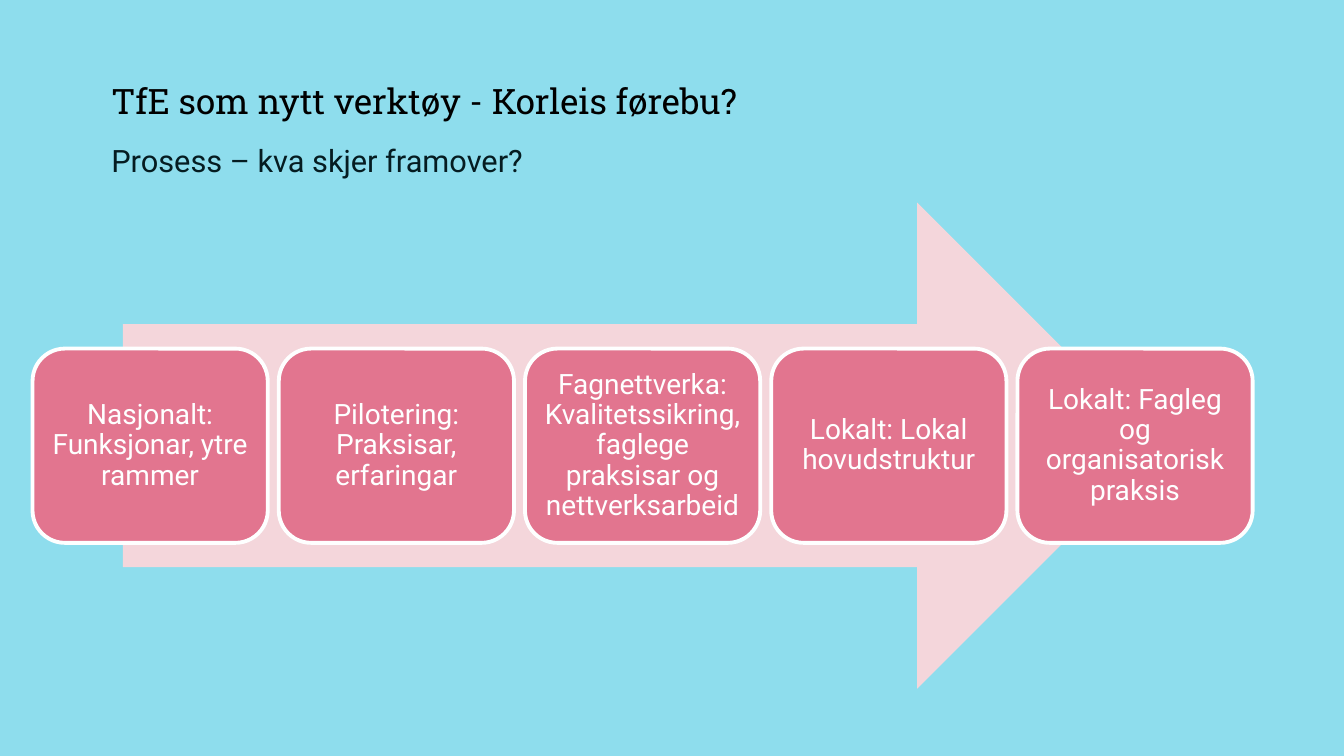
from pptx import Presentation
from pptx.dml.color import RGBColor
from pptx.enum.shapes import MSO_SHAPE
from pptx.enum.text import MSO_ANCHOR, PP_ALIGN
from pptx.util import Emu, Pt

RIGHT_ARROW = MSO_SHAPE.RIGHT_ARROW
ROUNDED = MSO_SHAPE.ROUNDED_RECTANGLE
TOP, MIDDLE = MSO_ANCHOR.TOP, MSO_ANCHOR.MIDDLE
LEFT, CENTER = PP_ALIGN.LEFT, PP_ALIGN.CENTER

EMU_PER_PX = 9525
SKY, BLUSH, ROSE, WHITE = "8EDDED", "F4D6DB", "E2758F", "FEFFFF"
BLACK, INK = "000000", "051C21"

STEPS = [
    "Nasjonalt: Funksjonar, ytre rammer",
    "Pilotering: Praksisar, erfaringar",
    "Fagnettverka: Kvalitetssikring, faglege praksisar og nettverksarbeid",
    "Lokalt: Lokal hovudstruktur",
    "Lokalt: Fagleg og organisatorisk praksis",
]
FIRST_STEP_LEFT, LAST_STEP_LEFT = 31, 969
STEP_TOP, STEP_WIDTH, STEP_HEIGHT = 332, 224, 185


def px(length):
    """Turn pixels into EMU."""
    return Emu(round(length * EMU_PER_PX))


def color(hex_code):
    """Turn a hex string into a colour."""
    return RGBColor.from_string(hex_code)


def write(frame, text, *, size, ink, font="Roboto", align=LEFT, anchor=TOP,
          line_spacing=0.9, inset_x=10, inset_y=5):
    """Put one formatted paragraph into a text frame."""
    frame.word_wrap = True
    frame.vertical_anchor = anchor
    frame.margin_left = frame.margin_right = px(inset_x)
    frame.margin_top = frame.margin_bottom = px(inset_y)
    paragraph = frame.paragraphs[0]
    paragraph.alignment = align
    paragraph.line_spacing = line_spacing
    run = paragraph.add_run()
    run.text = text
    run.font.name = font
    run.font.size = Pt(size)
    run.font.color.rgb = color(ink)


def add_heading(slide, text, top, height, **text_format):
    """Add a heading line at the left margin."""
    heading = slide.shapes.add_textbox(px(96), px(top), px(661), px(height))
    write(heading.text_frame, text, **text_format)


def add_block(slide, preset, left, top, width, height, fill, outline=None):
    """Add a flat preset shape, outlined if a colour is given."""
    block = slide.shapes.add_shape(preset, px(left), px(top), px(width), px(height))
    block.shadow.inherit = False
    block.fill.solid()
    block.fill.fore_color.rgb = color(fill)
    if outline:
        block.line.color.rgb = color(outline)
        block.line.width = Pt(2.75)
    else:
        block.line.fill.background()
    return block


def add_steps(slide):
    """Spread the process steps evenly along the arrow."""
    pitch = (LAST_STEP_LEFT - FIRST_STEP_LEFT) / (len(STEPS) - 1)
    for index, label in enumerate(STEPS):
        step = add_block(slide, ROUNDED, FIRST_STEP_LEFT + index * pitch, STEP_TOP,
                         STEP_WIDTH, STEP_HEIGHT, ROSE, outline=WHITE)
        write(step.text_frame, label, size=20, ink=WHITE, align=CENTER,
              anchor=MIDDLE, inset_x=8, inset_y=8)


def main():
    """Build and save the slide."""
    deck = Presentation()
    deck.slide_width, deck.slide_height = px(1280), px(720)
    slide = deck.slides.add_slide(deck.slide_layouts[6])
    slide.background.fill.solid()
    slide.background.fill.fore_color.rgb = color(SKY)
    add_heading(slide, "TfE som nytt verktøy - Korleis førebu?", 77, 60,
                size=25, ink=BLACK, font="Roboto Slab", line_spacing=0.85)
    add_heading(slide, "Prosess – kva skjer framover?", 133, 43,
                size=22, ink=INK, line_spacing=0.94)
    add_block(slide, RIGHT_ARROW, 117, 193, 988, 463, BLUSH)
    add_steps(slide)
    deck.save("out.pptx")


if __name__ == "__main__":
    main()
